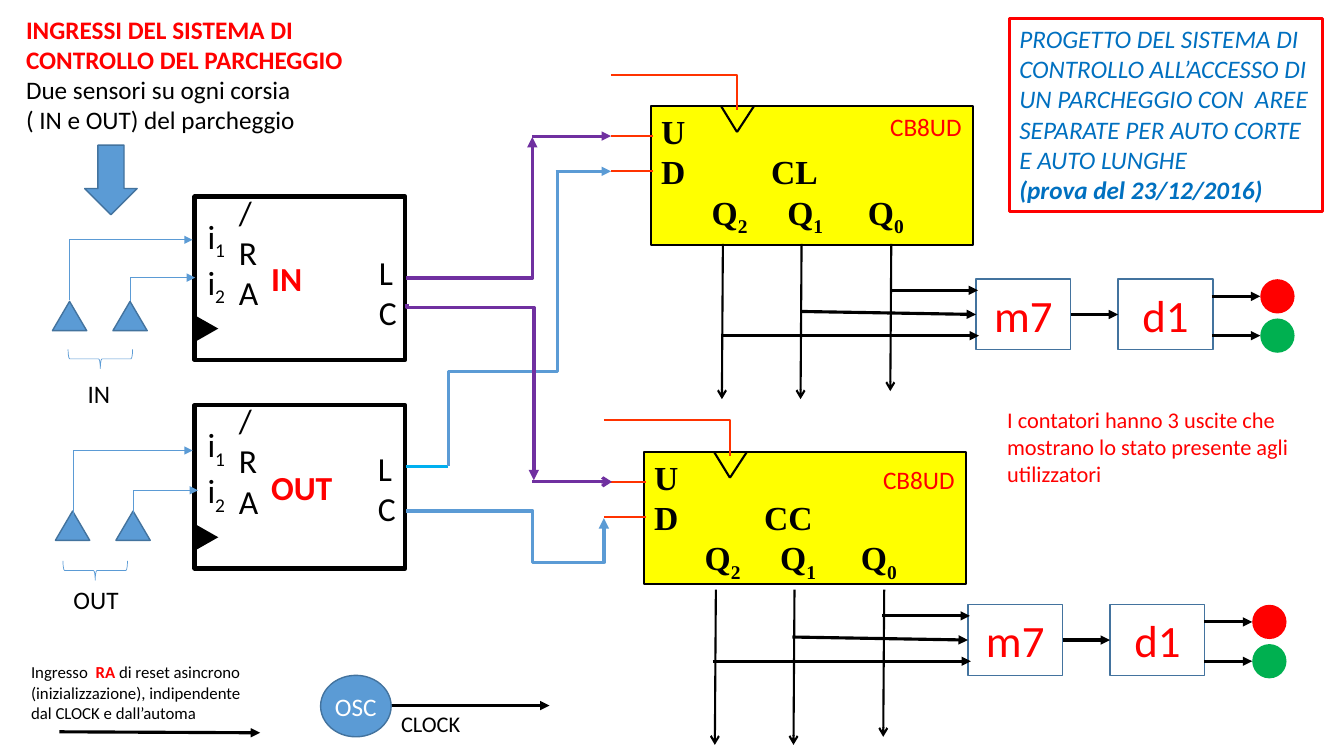
from dataclasses import dataclass

from lxml.etree import SubElement
from pptx import Presentation
from pptx.dml.color import RGBColor
from pptx.enum.shapes import MSO_CONNECTOR as LINK, MSO_SHAPE as FORM
from pptx.enum.text import MSO_ANCHOR, MSO_AUTO_SIZE, PP_ALIGN
from pptx.oxml.ns import qn
from pptx.util import Cm, Pt


@dataclass(frozen=True)
class Theme:
    black: str = "000000"
    white: str = "FFFFFF"
    red: str = "FF0000"
    green: str = "00B050"
    yellow: str = "FFFF00"
    orange: str = "FF3300"
    blue: str = "5B9BD5"
    edge: str = "43739E"
    sky: str = "00B0F0"
    navy: str = "0070C0"
    violet: str = "7030A0"
    sans: str = "Calibri"
    serif: str = "Times New Roman"
    note: int = 12
    small: int = 16
    body: int = 18
    pin: int = 24
    gate: int = 32


T = Theme()


def cm(*sizes):
    """Turn inches on the drawing grid into lengths."""
    return [Cm(size * 2.54) for size in sizes]


def paint(line, color, width):
    line.color.rgb = RGBColor.from_string(color)
    line.width = Pt(width)


def style(font, size, color, face=T.sans, bold=False):
    font.size, font.name, font.bold = Pt(size), face, bold
    font.color.rgb = RGBColor.from_string(color)


def lower(font):
    font._element.set("baseline", "-25000")


def write(frame, rows, size, color, face=T.sans, bold=False, mark=lower):
    """Fill a frame; every second piece between bars gets the mark."""
    frame.text = "\n".join(row.split("|")[0] for row in rows)
    for para, row in zip(frame.paragraphs, rows):
        for piece in row.split("|")[1:]:
            para.add_run().text = piece
        for pos, run in enumerate(para.runs):
            style(run.font, size, color, face, bold)
            # a row that opens with a tab still counts as one first piece
            if pos % 2:
                mark(run.font)


def label(slide, box, rows, size, color, wrap=False, **look):
    frame = slide.shapes.add_textbox(*cm(*box)).text_frame
    frame.word_wrap = wrap
    frame.auto_size = MSO_AUTO_SIZE.SHAPE_TO_FIT_TEXT
    write(frame, rows, size, color, **look)
    return frame


def shape(slide, form, box, fill=None, edge=None, width=1, turn=0):
    item = slide.shapes.add_shape(form, *cm(*box))
    item.shadow.inherit = False
    item.rotation = turn
    if fill:
        item.fill.solid()
        item.fill.fore_color.rgb = RGBColor.from_string(fill)
    else:
        item.fill.background()
    if edge:
        paint(item.line, edge, width)
    else:
        item.line.fill.background()
    return item


def center(item, text, size, color):
    frame = item.text_frame
    frame.vertical_anchor = MSO_ANCHOR.MIDDLE
    write(frame, [text], size, color)
    frame.paragraphs[0].alignment = PP_ALIGN.CENTER


def wire(slide, ends, color=T.black, width=2.25, tip="triangle", kind=LINK.STRAIGHT):
    link = slide.shapes.add_connector(kind, *cm(*ends))
    paint(link.line, color, width)
    if tip:
        SubElement(link.line._get_or_add_ln(), qn("a:tailEnd"), type=tip)
    SubElement(link._element.spPr, qn("a:effectLst"))
    return link


def bend(slide, box, turn, flips, kind, color, width, adj=(), tip="triangle"):
    """Draw an elbow connector from its frame, turn, flips and corner places."""
    x, y, w, h = box
    link = wire(slide, (x, y, x + w, y + h), color, width, tip, LINK.ELBOW)
    frame = link._element.spPr.find(qn("a:xfrm"))
    frame.set("rot", str(turn * 60000))
    for flip in flips:
        frame.set("flip" + flip, "1")
    geom = link._element.spPr.find(qn("a:prstGeom"))
    geom.set("prst", f"bentConnector{kind}")
    for old in list(geom):
        geom.remove(old)
    stops = SubElement(geom, qn("a:avLst"))
    for pos, part in enumerate(adj, 1):
        SubElement(stops, qn("a:gd"), name=f"adj{pos}" if kind > 2 else "adj",
                   fmla=f"val {round(part * 100000)}")


def tabs(para, stops):
    holder = SubElement(para._p.get_or_add_pPr(), qn("a:tabLst"))
    for stop in cm(*stops):
        SubElement(holder, qn("a:tab"), pos=str(stop), algn="l")


def machine(slide, name, y, port):
    """Draw one lane automaton; port is the corner of its L and C outputs."""
    label(slide, (1.96, y + 0.14, 0.39, 0.8), ["i|1", "i|2"], T.pin, T.black)
    label(slide, (2.27, y - 0.1, 0.42, 1.3), ["/RA"], T.pin, T.black, wrap=True)
    shape(slide, FORM.RECTANGLE, (1.93, y, 2.09, 1.62), edge=T.black, width=3)
    shape(slide, FORM.ISOSCELES_TRIANGLE, (1.93, y + 1.2, 0.25, 0.22), T.black, turn=90)
    label(slide, (*port, 0.38, 0.8), ["L", "C"], T.pin, T.black)
    wide = 0.51 if name == "IN" else 0.82
    label(slide, (2.59, y + 0.56, wide, 0.5), [name], T.pin, T.red, bold=True)


def counter(slide, name, x, y, high, drop):
    """Draw one counter with its pins; drop lowers its type label."""
    chip = shape(slide, FORM.RECTANGLE, (x, y, 3.19, high), T.yellow, T.black, 1.5)
    frame = chip.text_frame
    frame.vertical_anchor = MSO_ANCHOR.TOP
    write(frame, ["U", f"D\t{name}", "\tQ|2|\tQ|1|\tQ|0"], T.pin, T.black, T.serif, True)
    for para, stops in zip(frame.paragraphs, ([], [1.09], [0.5, 1.25, 2.05])):
        para.alignment = PP_ALIGN.LEFT
        if stops:
            tabs(para, stops)
    for side in (0.69, 1.02):
        wire(slide, (x + side, y, x + 0.85, y + 0.26), width=1.5, tip=None)
    for pin in (0.3, 0.65):
        wire(slide, (x - 0.4, y + pin, x + 0.02, y + pin), T.orange, 1.5, None)
    points = [cm(x + dx, y + dy) for dx, dy in ((-0.4, -0.31), (0.85, -0.31), (0.85, 0.04))]
    path = slide.shapes.build_freeform(*points[0])
    clock = path.add_line_segments(points[1:], close=False).convert_to_shape()
    clock.shadow.inherit = False
    clock.fill.background()
    paint(clock.line, T.orange, 1.5)
    for out, end in ((0.71, 2.91), (1.49, 2.91), (2.38, 2.83)):
        wire(slide, (x + out, y + 1.37, x + out - 0.01, y + end), width=1.5, tip="arrow")
    label(slide, (x + 2.27, y + drop, 0.92, 0.4), ["CB8UD"], T.body, T.red)


def decoder(slide, x, y):
    """Draw the m7 and d1 gates with their inputs and two lamps."""
    gates = []
    for name, left in (("m7", x), ("d1", x + 1.41)):
        gate = shape(slide, FORM.RECTANGLE, (left, y, 0.94, 0.7), T.white, T.edge)
        center(gate, name, T.gate, T.red)
        gates.append(gate)
    wire(slide, (x - 0.85, y + 0.11, x + 0.02, y + 0.11))
    wire(slide, (x - 1.74, y + 0.32, x, y + 0.35)).end_connect(gates[0], 1)
    wire(slide, (x - 2.53, y + 0.56, x + 0.03, y + 0.56))
    link = wire(slide, (x + 0.94, y + 0.35, x + 1.41, y + 0.35))
    link.begin_connect(gates[0], 3)
    link.end_connect(gates[1], 1)
    for color, drop in ((T.red, 0), (T.green, 0.39)):
        shape(slide, FORM.OVAL, (x + 2.82, y + drop, 0.34, 0.34), color)
        wire(slide, (x + 2.34, y + drop + 0.17, x + 2.82, y + drop + 0.17))


def lane(slide, name, x, y, brace, spot):
    """Draw a lane's two sensors, the brace below them and its name."""
    for left in (x, x + 0.6):
        shape(slide, FORM.ISOSCELES_TRIANGLE, (left, y, 0.34, 0.29), T.blue, T.edge)
    shape(slide, FORM.LEFT_BRACE, (*brace, 0.19, 0.64), edge=T.blue, width=0.5, turn=270)
    label(slide, spot, [name], T.body, T.black)


def links(slide):
    """Join sensors, automata and counters."""
    bend(slide, (1, 2.07, 0.6, 1.22), 90, "HV", 2, T.blue, 0.5)
    bend(slide, (1.5, 2.55, 0.23, 0.64), 90, "HV", 2, T.blue, 0.5)
    bend(slide, (0.72, 4.47, 1.19, 0.63), 0, "V", 3, T.blue, 0.5, [0.01])
    bend(slide, (1.53, 4.66, 0.23, 0.64), 90, "HV", 2, T.blue, 0.5)
    bend(slide, (4.03, 5.07, 1.96, 0.07), 0, "", 4, T.blue, 2.5, [0.64, 7.27])
    wire(slide, (4.03, 4.63, 4.44, 4.63), T.sky, tip=None)
    wire(slide, (5.51, 1.7, 6.06, 1.7), T.blue)
    bend(slide, (3.52, 2.62, 2.93, 1.08), 90, "HV", 3, T.blue, 2.25, [0.32], None)
    bend(slide, (4.03, 1.36, 1.25, 1.4), 0, "V", 2, T.violet, 2.5)
    wire(slide, (5.28, 1.35, 6.06, 1.35), T.violet)
    bend(slide, (3.79, 3.26, 1.75, 1.26), 270, "H", 3, T.violet, 2.5, [0.02])
    wire(slide, (5.28, 4.78, 6.07, 4.78), T.violet, tip="arrow")


def title(slide):
    head = slide.shapes.title
    head.left, head.top, head.width, head.height = cm(10.01, 0.18, 3.11, 1.92)
    paint(head.line, T.red, 2.25)
    frame = head.text_frame
    frame.word_wrap, frame.auto_size = True, MSO_AUTO_SIZE.NONE
    frame.vertical_anchor = MSO_ANCHOR.TOP
    write(frame, ["PROGETTO DEL SISTEMA DI CONTROLLO ALL’ACCESSO DI UN PARCHEGGIO CON  AREE "
                  "SEPARATE PER AUTO CORTE E AUTO LUNGHE", "(prova del 23/12/2016)"],
          T.body, T.navy)
    for para, bold in zip(frame.paragraphs, (False, True)):
        para.alignment = PP_ALIGN.LEFT
        para.runs[0].font.italic, para.runs[0].font.bold = True, bold


def notes(slide):
    """Write the texts around the circuit, with the reset and clock arrows."""
    wire(slide, (0.59, 7.26, 2.58, 7.27))
    label(slide, (0.21, 6.52, 2.36, 0.71),
          ["Ingresso  |RA| di reset asincrono (inizializzazione), indipendente dal CLOCK "
           "e dall’automa"], T.note, T.black, wrap=True,
          mark=lambda font: style(font, T.note, T.red, bold=True))
    wire(slide, (3.88, 7, 5.45, 7))
    label(slide, (3.88, 7, 0.8, 0.37), ["CLOCK"], T.small, T.black)
    clock = shape(slide, FORM.OVAL, (3.18, 6.7, 0.7, 0.61), T.blue, T.edge)
    frame = clock.text_frame
    frame.margin_left = frame.margin_right = frame.margin_top = frame.margin_bottom = 0
    center(clock, "OSC", T.body, T.white)
    label(slide, (9.89, 3.98, 3.19, 0.91),
          ["I contatori hanno 3 uscite che mostrano lo stato presente agli utilizzatori"],
          T.small, T.red, wrap=True)
    intro = label(slide, (0.16, 0.09, 4.15, 1.31),
                  ["INGRESSI DEL SISTEMA DI CONTROLLO DEL PARCHEGGIO",
                   "Due sensori su ogni corsia", "( IN e OUT) del parcheggio"],
                  T.body, T.black, wrap=True)
    style(intro.paragraphs[0].runs[0].font, T.body, T.red, bold=True)
    shape(slide, FORM.DOWN_ARROW, (0.84, 1.44, 0.52, 0.69), T.blue, T.edge)


def main():
    deck = Presentation()
    deck.slide_width, deck.slide_height = cm(13.33, 7.5)
    slide = deck.slides.add_slide(deck.slide_layouts[5])
    title(slide)
    notes(slide)
    machine(slide, "IN", 1.95, (3.66, 2.45))
    machine(slide, "OUT", 4.02, (3.65, 4.39))
    counter(slide, "CL", 6.46, 1.05, 1.38, 0.01)
    counter(slide, "CC", 6.39, 4.48, 1.31, 0.08)
    decoder(slide, 9.68, 2.77)
    decoder(slide, 9.6, 6)
    lane(slide, "IN", 0.52, 2.99, (0.9, 3.24), (0.77, 3.7, 0.43, 0.4))
    lane(slide, "OUT", 0.55, 5.07, (0.85, 5.34), (0.63, 5.75, 0.65, 0.4))
    links(slide)
    deck.save("out.pptx")


if __name__ == "__main__":
    main()
